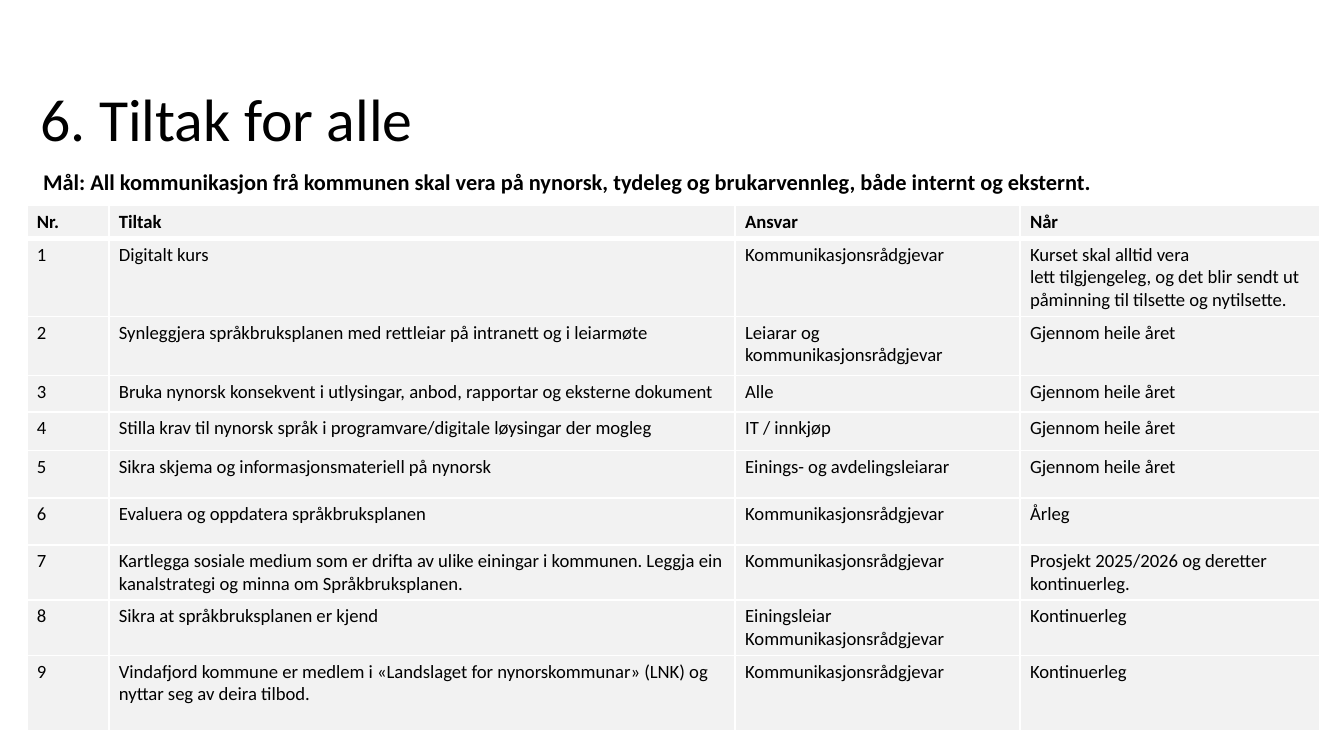
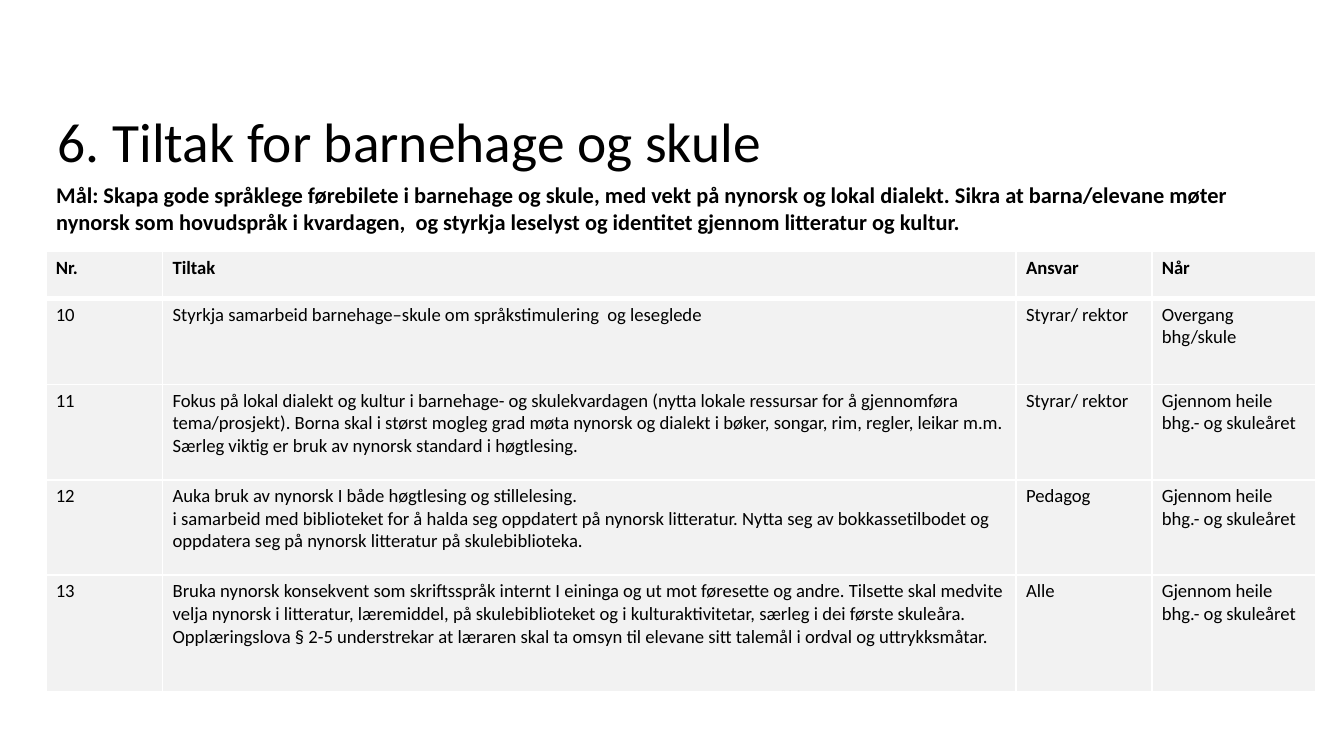
import dataclasses

import lxml.etree
import pptx
import pptx.dml.color
import pptx.enum.text
import pptx.oxml.ns
import pptx.presentation
import pptx.slide
import pptx.table
import pptx.text.text
import pptx.util
from pptx.util import Inches

BLACK = pptx.dml.color.RGBColor(0x00, 0x00, 0x00)
WHITE = pptx.dml.color.RGBColor(0xFF, 0xFF, 0xFF)
LIGHT_GREY = pptx.dml.color.RGBColor(0xF2, 0xF2, 0xF2)

FONT_NAME = "Calibri"
GOAL_SIZE = 12
TABLE_SIZE = 10
THIN_BORDER = 1
HEADER_BORDER = 3
TITLE_ONLY_LAYOUT = 5
SLIDE_WIDTH = Inches(10)
SLIDE_HEIGHT = SLIDE_WIDTH * 9 // 16
CELL_SIDE_MARGIN = Inches(0.15) // 2
CELL_END_MARGIN = CELL_SIDE_MARGIN // 2
NO_BREAK_SPACE = chr(160)

HEADER = ("Nr.", "Tiltak", "Ansvar", "Når")
ADVISER = "Kommunikasjonsrådgjevar"
ALL_YEAR = "Gjennom heile året"
SCHOOL_YEAR = "Gjennom heile bhg.- og skuleåret"
CONTINUOUS = "Kontinuerleg"
HEAD_TEACHER = "Styrar/ rektor"


@dataclasses.dataclass(frozen=True)
class Box:
    left: float
    top: float
    width: float
    height: float

    def lengths(self) -> tuple[Inches, ...]:
        return tuple(Inches(value) for value in dataclasses.astuple(self))


@dataclasses.dataclass(frozen=True)
class Measure:
    action: str
    responsible: str
    timing: str


@dataclasses.dataclass(frozen=True)
class MeasureSlide:
    title: str
    title_size: float
    title_box: Box
    goal: str
    goal_box: Box
    goal_alignment: pptx.enum.text.PP_ALIGN
    table_box: Box
    column_widths: tuple[float, ...]
    row_heights: tuple[float, ...]
    first_number: int
    measures: tuple[Measure, ...]


MEASURE_SLIDES = (
    MeasureSlide(
        title="6. Tiltak for alle",
        title_size=32,
        title_box=Box(0.2, 0.61, 7.16, 0.59),
        goal="Mål: All kommunikasjon frå kommunen skal vera på nynorsk, tydeleg og "
        "brukarvennleg, både internt og eksternt.",
        goal_box=Box(0.2, 1.2, 8.05, 0.3),
        goal_alignment=pptx.enum.text.PP_ALIGN.CENTER,
        table_box=Box(0.2, 1.53, 9.62, 3.89),
        column_widths=(0.61, 4.66, 2.12, 2.23),
        row_heights=(0.23, 0.53, 0.44, 0.27, 0.29, 0.35, 0.35, 0.41, 0.41, 0.56),
        first_number=1,
        measures=(
            Measure(
                "Digitalt kurs",
                ADVISER,
                f"Kurset skal alltid vera lett{NO_BREAK_SPACE}tilgjengeleg, og det blir "
                "sendt ut påminning til tilsette og nytilsette.",
            ),
            Measure(
                "Synleggjera språkbruksplanen med rettleiar på intranett og i leiarmøte",
                "Leiarar og kommunikasjonsrådgjevar",
                ALL_YEAR,
            ),
            Measure(
                "Bruka nynorsk konsekvent i utlysingar, anbod, rapportar og eksterne dokument",
                "Alle",
                ALL_YEAR,
            ),
            Measure(
                "Stilla krav til nynorsk språk i programvare/digitale løysingar der mogleg",
                "IT / innkjøp",
                ALL_YEAR,
            ),
            Measure(
                "Sikra skjema og informasjonsmateriell på nynorsk",
                "Einings- og avdelingsleiarar",
                ALL_YEAR,
            ),
            Measure("Evaluera og oppdatera språkbruksplanen", ADVISER, "Årleg"),
            Measure(
                "Kartlegga sosiale medium som er drifta av ulike einingar i kommunen. "
                "Leggja ein kanalstrategi og minna om Språkbruksplanen.",
                ADVISER,
                "Prosjekt 2025/2026 og deretter kontinuerleg.",
            ),
            Measure(
                "Sikra at språkbruksplanen er kjend",
                f"Einingsleiar\n{ADVISER}",
                CONTINUOUS,
            ),
            Measure(
                "Vindafjord kommune er medlem i «Landslaget for nynorskommunar» (LNK) "
                "og nyttar seg av deira tilbod.",
                ADVISER,
                CONTINUOUS,
            ),
        ),
    ),
    MeasureSlide(
        title="6. Tiltak for barnehage og skule",
        title_size=29.7,
        title_box=Box(0.33, 0.8, 8.57, 0.55),
        goal="Mål: Skapa gode språklege førebilete i barnehage og skule, med vekt på "
        "nynorsk og lokal dialekt. Sikra at barna/elevane møter nynorsk som hovudspråk "
        "i kvardagen,  og styrkja leselyst og identitet gjennom litteratur og kultur.",
        goal_box=Box(0.32, 1.3, 9.49, 0.5),
        goal_alignment=pptx.enum.text.PP_ALIGN.LEFT,
        table_box=Box(0.34, 1.87, 9.45, 3.28),
        column_widths=(0.87, 6.35, 1.01, 1.22),
        row_heights=(0.35, 0.64, 0.71, 0.71, 0.87),
        first_number=10,
        measures=(
            Measure(
                "Styrkja samarbeid barnehage–skule om språkstimulering  og leseglede",
                HEAD_TEACHER,
                "Overgang bhg/skule",
            ),
            Measure(
                "Fokus på lokal dialekt og kultur i barnehage- og skulekvardagen (nytta "
                "lokale ressursar for å gjennomføra tema/prosjekt). Borna skal i størst "
                "mogleg grad møta nynorsk og dialekt i bøker, songar, rim, regler, leikar "
                "m.m. Særleg viktig er bruk av nynorsk standard i høgtlesing.",
                HEAD_TEACHER,
                SCHOOL_YEAR,
            ),
            Measure(
                "Auka bruk av nynorsk I både høgtlesing og stillelesing.\n"
                "i samarbeid med biblioteket for å halda seg oppdatert på nynorsk "
                "litteratur. Nytta seg av bokkassetilbodet og oppdatera seg på nynorsk "
                "litteratur på skulebiblioteka.",
                "Pedagog",
                SCHOOL_YEAR,
            ),
            Measure(
                "Bruka nynorsk konsekvent som skriftsspråk internt I eininga og ut mot "
                "føresette og andre. Tilsette skal medvite velja nynorsk i litteratur, "
                "læremiddel, på skulebiblioteket og i kulturaktivitetar, særleg i dei "
                "første skuleåra. Opplæringslova § 2-5 understrekar at læraren skal ta "
                "omsyn til elevane sitt talemål i ordval og uttrykksmåtar.",
                "Alle",
                SCHOOL_YEAR,
            ),
        ),
    ),
)


def add_run(
    paragraph: pptx.text.text._Paragraph, text: str, size: float, bold: bool = False
) -> None:
    run = paragraph.add_run()
    run.text = text
    run.font.name = FONT_NAME
    run.font.size = pptx.util.Pt(size)
    run.font.bold = bold
    run.font.color.rgb = BLACK


def add_title(slide: pptx.slide.Slide, content: MeasureSlide) -> None:
    title = slide.shapes.title
    title.left, title.top, title.width, title.height = content.title_box.lengths()
    text_frame = title.text_frame
    text_frame.auto_size = pptx.enum.text.MSO_AUTO_SIZE.NONE
    text_frame.word_wrap = True
    text_frame.vertical_anchor = pptx.enum.text.MSO_ANCHOR.BOTTOM
    paragraph = text_frame.paragraphs[0]
    paragraph.alignment = pptx.enum.text.PP_ALIGN.LEFT
    paragraph.line_spacing = 0.9
    add_run(paragraph, content.title, content.title_size)


def add_goal(slide: pptx.slide.Slide, content: MeasureSlide) -> None:
    text_frame = slide.shapes.add_textbox(*content.goal_box.lengths()).text_frame
    text_frame.word_wrap = True
    text_frame.auto_size = pptx.enum.text.MSO_AUTO_SIZE.SHAPE_TO_FIT_TEXT
    paragraph = text_frame.paragraphs[0]
    paragraph.alignment = content.goal_alignment
    add_run(paragraph, content.goal, GOAL_SIZE, bold=True)


def set_borders(cell: pptx.table._Cell, bottom: float) -> None:
    properties = cell._tc.get_or_add_tcPr()
    widths = {"lnL": THIN_BORDER, "lnR": THIN_BORDER, "lnT": THIN_BORDER, "lnB": bottom}
    for tag, width in widths.items():
        line = lxml.etree.SubElement(
            properties, pptx.oxml.ns.qn(f"a:{tag}"), w=str(pptx.util.Pt(width))
        )
        fill = lxml.etree.SubElement(line, pptx.oxml.ns.qn("a:solidFill"))
        lxml.etree.SubElement(fill, pptx.oxml.ns.qn("a:srgbClr"), val=str(WHITE))


def fill_cell(cell: pptx.table._Cell, text: str, is_header: bool) -> None:
    set_borders(cell, bottom=HEADER_BORDER if is_header else THIN_BORDER)
    cell.fill.solid()
    cell.fill.fore_color.rgb = LIGHT_GREY
    cell.margin_left = cell.margin_right = CELL_SIDE_MARGIN
    cell.margin_top = cell.margin_bottom = CELL_END_MARGIN
    text_frame = cell.text_frame
    for index, line in enumerate(text.split("\n")):
        paragraph = text_frame.add_paragraph() if index else text_frame.paragraphs[0]
        add_run(paragraph, line, TABLE_SIZE, bold=is_header)


def add_measure_table(slide: pptx.slide.Slide, content: MeasureSlide) -> None:
    rows = [HEADER] + [
        (str(number), *dataclasses.astuple(measure))
        for number, measure in enumerate(content.measures, content.first_number)
    ]
    table = slide.shapes.add_table(
        len(rows), len(HEADER), *content.table_box.lengths()
    ).table
    table.horz_banding = False
    for column, width in zip(table.columns, content.column_widths):
        column.width = Inches(width)
    for row, height in zip(table.rows, content.row_heights):
        row.height = Inches(height)
    for row_index, texts in enumerate(rows):
        for column_index, text in enumerate(texts):
            fill_cell(table.cell(row_index, column_index), text, row_index == 0)


def add_measure_slide(
    presentation: pptx.presentation.Presentation, content: MeasureSlide
) -> None:
    layout = presentation.slide_layouts[TITLE_ONLY_LAYOUT]
    slide = presentation.slides.add_slide(layout)
    slide.background.fill.solid()
    slide.background.fill.fore_color.rgb = WHITE
    add_title(slide, content)
    add_measure_table(slide, content)
    add_goal(slide, content)


def main() -> None:
    presentation = pptx.Presentation()
    presentation.slide_width = SLIDE_WIDTH
    presentation.slide_height = SLIDE_HEIGHT
    for content in MEASURE_SLIDES:
        add_measure_slide(presentation, content)
    presentation.save("out.pptx")


if __name__ == "__main__":
    main()
